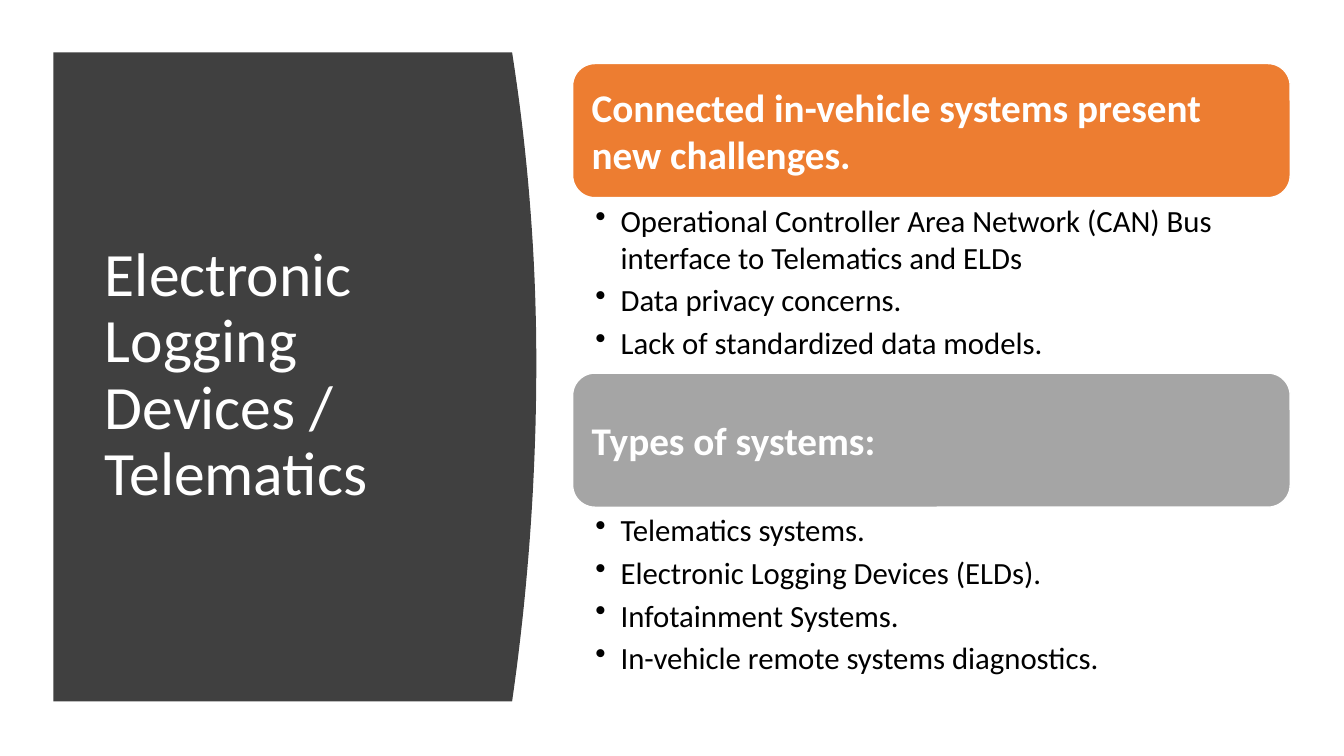
import pptx
import pptx.util
import pptx.dml.color
import pptx.enum.shapes
import pptx.enum.text
import pptx.oxml.ns
import lxml.etree

Pt = pptx.util.Pt
RGB = pptx.dml.color.RGBColor.from_string
ANCHOR = pptx.enum.text.MSO_ANCHOR
LEFT = pptx.enum.text.PP_ALIGN.LEFT

THEME = {
    "font": "Calibri",
    "panel": "404040", "light": "FFFFFF", "dark": "000000",
    "accents": ["ED7D31", "A5A5A5"],
    "title": 44, "heading": 28, "body": 22,
}


def set_frame(tf, anchor, left, top, right, bottom):
    values = {
        "word_wrap": True, "auto_size": pptx.enum.text.MSO_AUTO_SIZE.NONE,
        "vertical_anchor": anchor,
        "margin_left": Pt(left), "margin_top": Pt(top),
        "margin_right": Pt(right), "margin_bottom": Pt(bottom),
    }
    for name, value in values.items():
        setattr(tf, name, value)


def write(p, text, size, color, bold=False):
    p.alignment = LEFT
    r = p.add_run()
    r.text = text
    values = {"name": THEME["font"], "size": Pt(THEME[size]), "bold": bold}
    for name, value in values.items():
        setattr(r.font, name, value)
    r.font.color.rgb = RGB(THEME[color])


prs = pptx.Presentation()
prs.slide_width, prs.slide_height = Pt(960), Pt(540)
s = prs.slides.add_slide(prs.slide_layouts[5])

panel_left, panel_top, panel_bottom = 38.2, 37.4, 501.1
edge, bulge, bulge_y, steps = 365.8, 17.3, 259.2, 40
curve = []
for i in range(steps + 1):
    y = panel_top + (panel_bottom - panel_top) * i / steps
    reach = bulge_y - panel_top if y < bulge_y else panel_bottom - bulge_y
    x = edge + bulge * (1 - ((y - bulge_y) / reach) ** 2)
    curve.append((Pt(x), Pt(y)))
builder = s.shapes.build_freeform(Pt(panel_left), Pt(panel_top))
builder.add_line_segments(curve + [(Pt(panel_left), Pt(panel_bottom))], close=True)
panel = builder.convert_to_shape()
panel.shadow.inherit = False
panel.fill.solid()
panel.fill.fore_color.rgb = RGB(THEME["panel"])
panel.line.fill.background()

title = s.shapes.title
s.shapes._spTree.append(title._element)
box = {"left": 67.7, "top": 79.9, "width": 269.3, "height": 377.3}
for name, value in box.items():
    setattr(title, name, Pt(value))
set_frame(title.text_frame, ANCHOR.MIDDLE, 7.2, 3.6, 7.2, 3.6)
p = title.text_frame.paragraphs[0]
p.line_spacing = 0.9
write(p, "Electronic Logging Devices / Telematics", "title", "light")

sections = [
    ("Connected in-vehicle systems present new challenges.", 125.3, [
        "Operational Controller Area Network (CAN) Bus interface to Telematics and ELDs",
        "Data privacy concerns.",
        "Lack of standardized data models.",
    ]),
    ("Types of systems:", 130.3, [
        "Telematics systems.",
        "Electronic Logging Devices (ELDs).",
        "Infotainment Systems.",
        "In-vehicle remote systems diagnostics.",
    ]),
]
left, width, heading_height = 409, 512.6, 95.8
top = 45.4
for (heading, body_height, bullets), accent in zip(sections, THEME["accents"]):
    sp = s.shapes.add_shape(
        pptx.enum.shapes.MSO_SHAPE.ROUNDED_RECTANGLE,
        Pt(left), Pt(top), Pt(width), Pt(heading_height))
    sp.shadow.inherit = False
    sp.fill.solid()
    sp.fill.fore_color.rgb = RGB(accent)
    sp.line.color.rgb = RGB(THEME["light"])
    sp.line.width = Pt(1)
    set_frame(sp.text_frame, ANCHOR.MIDDLE, 8.9, 8.6, 8.9, 8.6)
    write(sp.text_frame.paragraphs[0], heading, "heading", "light", bold=True)
    top += heading_height

    tb = s.shapes.add_textbox(Pt(left), Pt(top), Pt(width), Pt(body_height))
    tf = tb.text_frame
    set_frame(tf, ANCHOR.TOP, 16.3, 2.8, 15.6, 2.8)
    for i, text in enumerate(bullets):
        p = tf.add_paragraph() if i else tf.paragraphs[0]
        p.space_after = Pt(4)
        write(p, text, "body", "dark")
        pPr = p._p.get_or_add_pPr()
        pPr.set("marL", str(Pt(18)))
        pPr.set("indent", str(-Pt(18)))
        bullet = lxml.etree.SubElement(pPr, pptx.oxml.ns.qn("a:buChar"))
        bullet.set("char", "•")
    top += body_height

prs.save("out.pptx")
